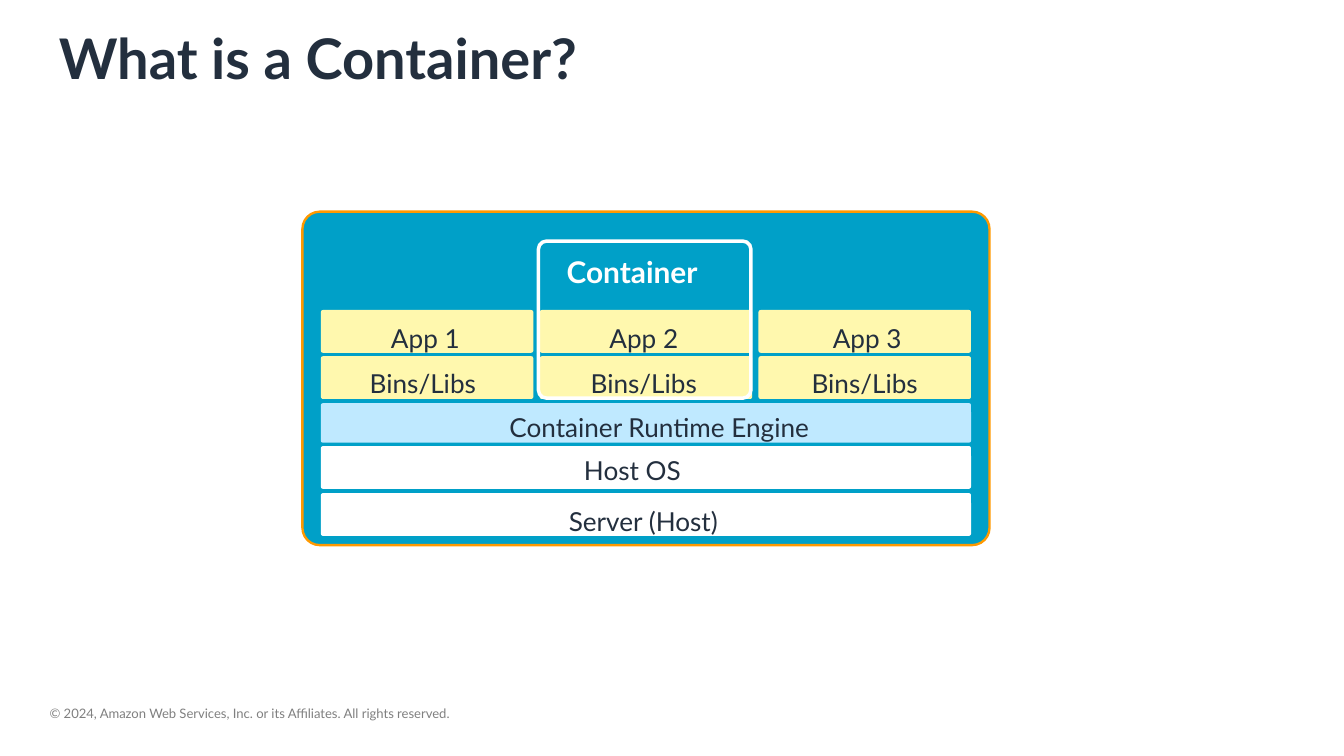
from pptx import Presentation
from pptx.dml.color import RGBColor
from pptx.enum.shapes import MSO_SHAPE
from pptx.enum.text import MSO_ANCHOR, PP_ALIGN
from pptx.util import Inches, Pt

# Content
TITLE = "What is a Container?"
FOOTER = "© 2024, Amazon Web Services, Inc. or its Affiliates. All rights reserved."
# Full-width layers: text, bar top, bar height, fill, label left, top, width
LAYERS = [
    ("Server (Host)", 5.87, 0.51, "FFFFFF", 6.03, 5.97, 3.26),
    ("Host OS", 5.31, 0.51, "FFFFFF", 5.9, 5.36, 3.26),
    ("Container Runtime Engine", 4.8, 0.47, "BFE9FF", 5.4, 4.85, 4.9),
]
# Split rows: bar top, label top, then text, label left and width per cell
ROWS = [
    (4.24, 4.32, [("Bins/Libs", 4.07, 1.93), ("Bins/Libs", 6.63, 2.07),
                  ("Bins/Libs", 9.33, 1.93)]),
    (3.69, 3.79, [("App 1", 4.1, 1.93), ("App 2", 6.63, 2.07),
                  ("App 3", 9.36, 1.93)]),
]

# Style and grid
FONT, INK, BLUE, GOLD, CREAM = "Lato", "232F3E", "00A0C8", "FF9900", "FFF8AE"
LEFT, WIDE, CELL, HIGH = 3.82, 7.74, 2.53, 0.51
STEP = (WIDE - CELL) / 2

deck = Presentation()
deck.slide_width, deck.slide_height = Inches(16), Inches(9)
slide = deck.slides.add_slide(deck.slide_layouts[5])


def color(code):
    return RGBColor.from_string(code)


def write(frame, text, size=22.4, ink=INK, bold=False, align=PP_ALIGN.CENTER,
          anchor=MSO_ANCHOR.TOP):
    frame.word_wrap = True
    frame.vertical_anchor = anchor
    para = frame.paragraphs[0]
    para.alignment = align
    run = para.add_run()
    run.text = text
    font = run.font
    font.name, font.size, font.bold = FONT, Pt(size), bold
    font.color.rgb = color(ink)


def label(text, x, y, w, h=0.48, **style):
    box = slide.shapes.add_textbox(Inches(x), Inches(y), Inches(w), Inches(h))
    write(box.text_frame, text, **style)
    return box


def panel(x, y, w, h, fill=None, line=None, width=1):
    shape = slide.shapes.add_shape(MSO_SHAPE.ROUNDED_RECTANGLE, Inches(x),
                                   Inches(y), Inches(w), Inches(h))
    shape.adjustments[0] = 0.052
    shape.shadow.inherit = False
    if fill:
        shape.fill.solid()
        shape.fill.fore_color.rgb = color(fill)
    else:
        shape.fill.background()
    if line:
        shape.line.color.rgb = color(line)
        shape.line.width = Pt(width)
    else:
        shape.line.fill.background()


# Title and footer
title = slide.shapes.title
title.left, title.top = Inches(0.6), Inches(0.2)
title.width, title.height = Inches(14.78), Inches(0.95)
write(title.text_frame, TITLE, size=48, bold=True, align=PP_ALIGN.LEFT,
      anchor=MSO_ANCHOR.MIDDLE)
foot = label(FOOTER, 0.59, 8.4, 7.78, 0.19, size=11.2, ink="808080",
             align=PP_ALIGN.LEFT).text_frame
foot.margin_left = foot.margin_right = foot.margin_top = foot.margin_bottom = 0

# Host panel and its layers
panel(3.6, 2.52, 8.18, 3.97, BLUE, GOLD, 2)
for text, top, high, fill, x, y, w in LAYERS:
    panel(LEFT, top, WIDE, high, fill)
    label(text, x, y, w)

# Apps and their libraries
for top, y, cells in ROWS:
    for col, (text, x, w) in enumerate(cells):
        panel(LEFT + col * STEP, top, CELL, HIGH, CREAM)
        label(text, x, y, w)

# Container frame around the middle column
label("Container", 6.36, 2.97, 2.33, 0.53, size=25.6, ink="FFFFFF", bold=True)
panel(6.41, 2.87, CELL, 1.87, line="FFFFFF", width=3)

deck.save("out.pptx")
